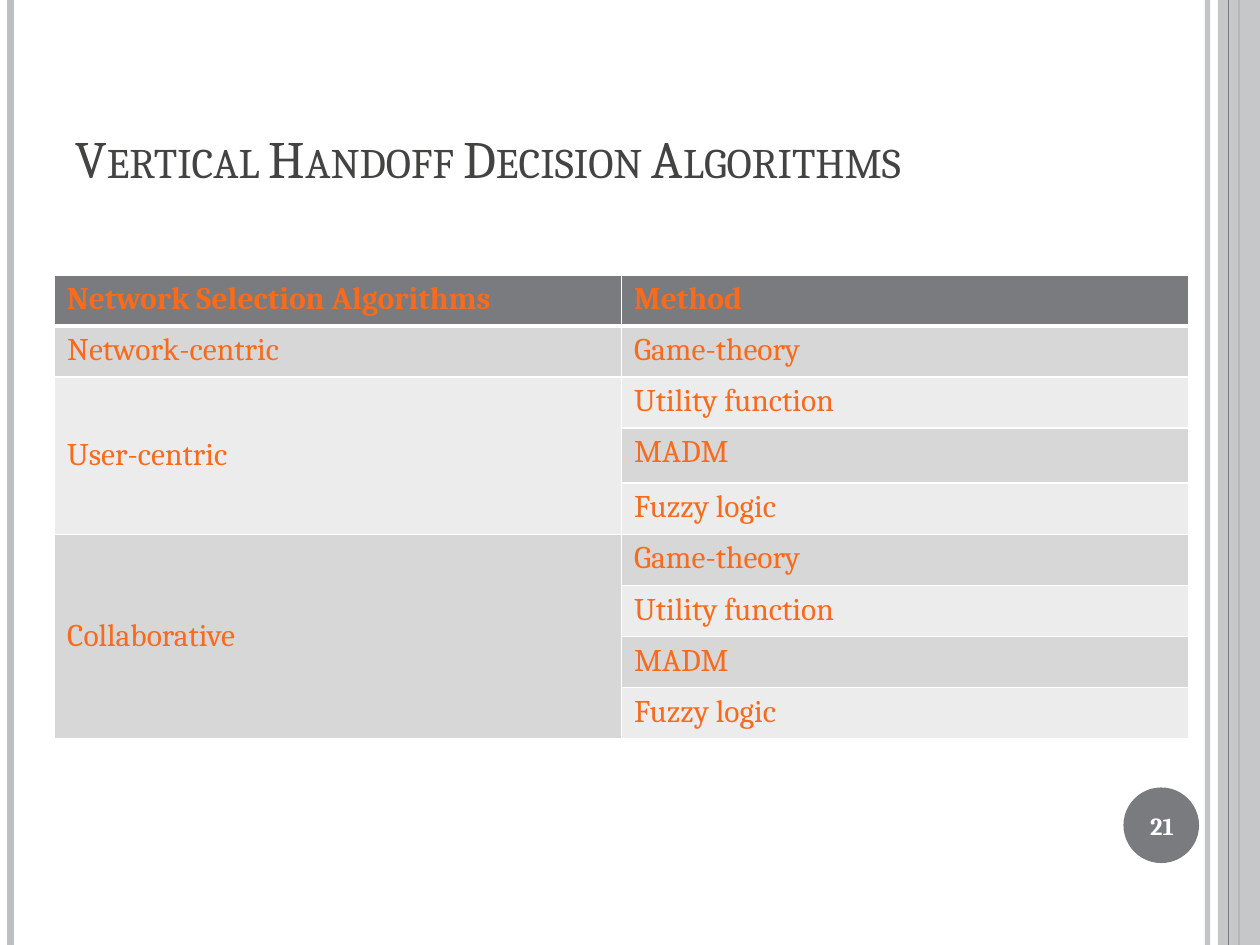
from lxml.etree import SubElement
from pptx import Presentation
from pptx.dml.color import RGBColor
from pptx.enum.shapes import MSO_CONNECTOR, MSO_SHAPE
from pptx.enum.text import MSO_ANCHOR, PP_ALIGN
from pptx.oxml import parse_xml
from pptx.oxml.ns import nsdecls, qn
from pptx.util import Pt

WIDTH, HEIGHT = 720, 540
GREY, SILVER, WHITE = "797B7E", "BEBFC0", "FFFFFF"
ORANGE, DARK = "F96A1B", "434342"
BANDS = ("ECECEC", "D7D7D8")

GROUPS = [
    ("Network-centric", ["Game-theory"]),
    ("User-centric", ["Utility function", "MADM", "Fuzzy logic"]),
    ("Collaborative", ["Game-theory", "Utility function", "MADM", "Fuzzy logic"]),
]


def rgb(value):
    return RGBColor.from_string(value)


class Deck:
    font = "Cambria"

    def __init__(self):
        self.prs = Presentation()
        self.prs.slide_width, self.prs.slide_height = Pt(WIDTH), Pt(HEIGHT)
        self.s = self.prs.slides.add_slide(self.prs.slide_layouts[6])

    def fade(self, sp, percent):
        for color in sp._element.spPr.iter(qn("a:srgbClr")):
            SubElement(color, qn("a:alpha"), val=str(percent * 1000))

    def rule(self, x, color, width, opacity=100):
        sp = self.s.shapes.add_connector(MSO_CONNECTOR.STRAIGHT, Pt(x), Pt(0), Pt(x), Pt(HEIGHT))
        sp.line.color.rgb = rgb(color)
        sp.line.width = Pt(width)
        if opacity < 100:
            self.fade(sp, opacity)
        SubElement(sp._element.spPr, qn("a:effectLst"))

    def shape(self, kind, x, y, w, h, color, opacity=100):
        sp = self.s.shapes.add_shape(kind, Pt(x), Pt(y), Pt(w), Pt(h))
        sp.shadow.inherit = False
        sp.fill.solid()
        sp.fill.fore_color.rgb = rgb(color)
        sp.line.fill.background()
        if opacity < 100:
            self.fade(sp, opacity)

    def set_text(self, tf, text, size, color, bold=False):
        tf.text = text
        r = tf.paragraphs[0].runs[0]
        r.font.name, r.font.size, r.font.bold = self.font, Pt(size), bold
        r.font.color.rgb = rgb(color)
        return r

    def text(self, x, y, w, h, text, size, color, anchor, align=PP_ALIGN.LEFT, bold=False, caps=False):
        tf = self.s.shapes.add_textbox(Pt(x), Pt(y), Pt(w), Pt(h)).text_frame
        tf.word_wrap = True
        tf.vertical_anchor = anchor
        r = self.set_text(tf, text, size, color, bold)
        tf.paragraphs[0].alignment = align
        if caps:
            r.font._element.set("cap", "small")

    def cell(self, cell, fill, bottom):
        cell.fill.solid()
        cell.fill.fore_color.rgb = rgb(fill)
        tcPr = cell._tc.get_or_add_tcPr()
        for i, (side, width) in enumerate(zip("LRTB", (1, 1, 1, bottom))):
            tcPr.insert(i, parse_xml(
                f'<a:ln{side} {nsdecls("a")} w="{Pt(width)}"><a:solidFill>'
                f'<a:srgbClr val="{WHITE}"/></a:solidFill></a:ln{side}>'))

    def table(self, x, y, col_width, row_heights, header, groups):
        table = self.s.shapes.add_table(
            len(row_heights), 2, Pt(x), Pt(y), Pt(2 * col_width), Pt(sum(row_heights))).table
        for column in table.columns:
            column.width = Pt(col_width)
        for row, height in zip(table.rows, row_heights):
            row.height = Pt(height)
        for c, title in enumerate(header):
            self.cell(table.cell(0, c), GREY, 3)
            self.set_text(table.cell(0, c).text_frame, title, 18, ORANGE, True)
        top = 1
        for name, methods in groups:
            for i, method in enumerate(methods, top):
                self.cell(table.cell(i, 0), BANDS[top % 2], 1)
                self.cell(table.cell(i, 1), BANDS[i % 2], 1)
                self.set_text(table.cell(i, 1).text_frame, method, 18, ORANGE)
            first = table.cell(top, 0)
            self.set_text(first.text_frame, name, 18, ORANGE)
            if len(methods) > 1:
                first.merge(table.cell(top + len(methods) - 1, 0))
                first.vertical_anchor = MSO_ANCHOR.MIDDLE
            top += len(methods)


def main():
    deck = Deck()
    deck.rule(690, SILVER, 3, 93)
    deck.rule(6, SILVER, 4.5)
    deck.rule(708, GREY, 1.5)
    deck.shape(MSO_SHAPE.RECTANGLE, 696, 0, 24, HEIGHT, SILVER, 87)
    deck.rule(702, GREY, 0.75)
    deck.shape(MSO_SHAPE.OVAL, 642, 450, 43.2, 43.2, GREY)
    heights = [29.2] * 9
    heights[3] = 31.5
    deck.table(31.2, 157, 324, heights, ("Network Selection Algorithms", "Method"), GROUPS)
    deck.text(36, 21.6, 588, 90, "Vertical Handoff Decision Algorithms", 30, DARK,
              MSO_ANCHOR.BOTTOM, caps=True)
    deck.text(640, 451.5, 48, 41, "21", 14, WHITE, MSO_ANCHOR.MIDDLE, PP_ALIGN.CENTER, bold=True)
    deck.prs.save("out.pptx")


if __name__ == "__main__":
    main()
